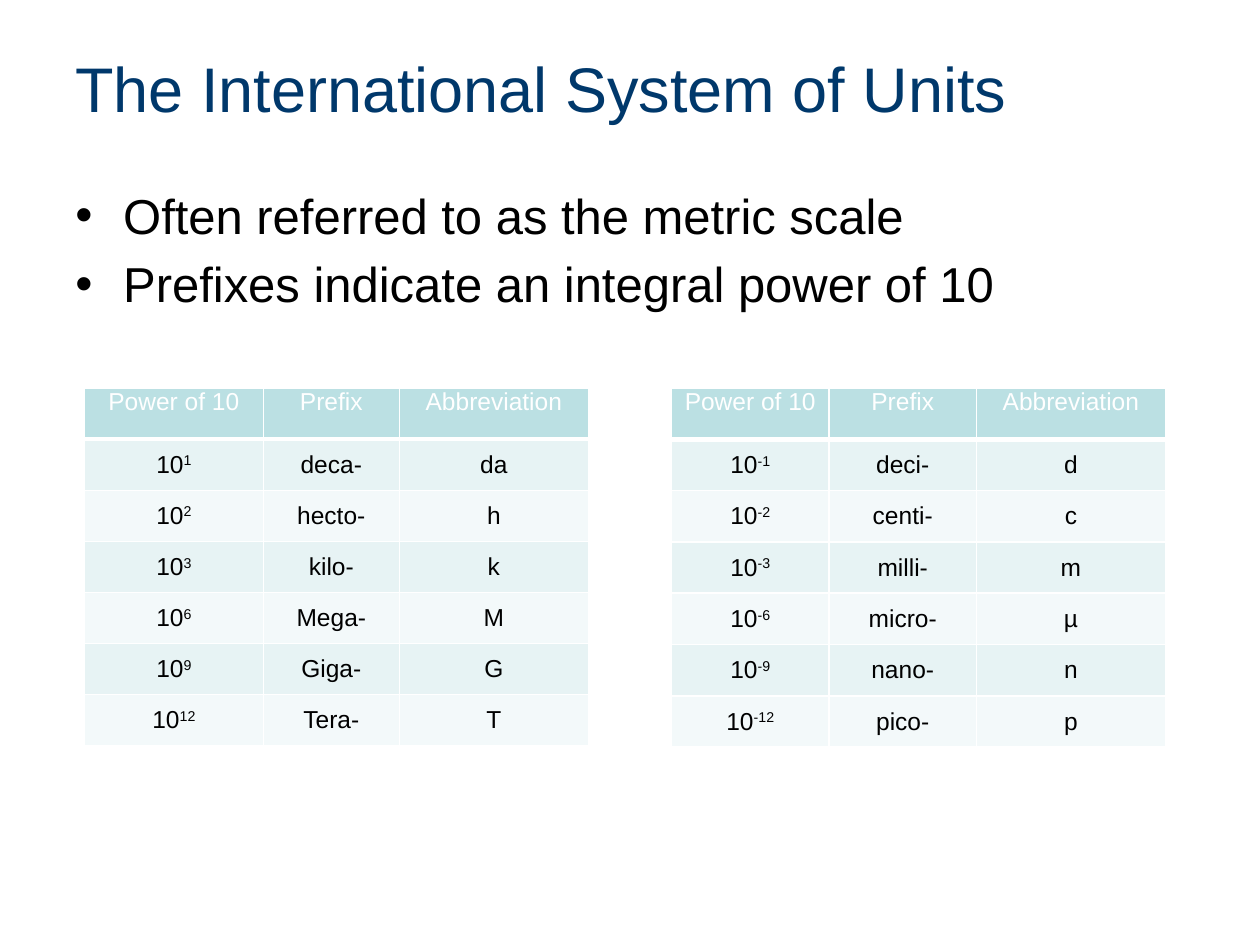
from pptx import Presentation
from pptx.dml.color import RGBColor
from pptx.enum import text
from pptx.oxml import parse_xml
from pptx.oxml.ns import nsdecls
from pptx.util import Inches, Pt

FONT = "Arial"
NAVY = RGBColor(0x00, 0x38, 0x6B)
BLACK = RGBColor(0x00, 0x00, 0x00)
WHITE = RGBColor(0xFF, 0xFF, 0xFF)
HEADER_FILL = RGBColor(0xBB, 0xE0, 0xE3)
BAND_FILLS = (RGBColor(0xE7, 0xF3, 0xF4), RGBColor(0xF3, 0xF9, 0xFA))

HEADINGS = ("Power of 10", "Prefix", "Abbreviation")
BULLETS = ("Often referred to as the metric scale",
           "Prefixes indicate an integral power of 10")
# Exponent, prefix, abbreviation
LARGE_UNITS = (("1", "deca-", "da"), ("2", "hecto-", "h"), ("3", "kilo-", "k"),
               ("6", "Mega-", "M"), ("9", "Giga-", "G"), ("12", "Tera-", "T"))
SMALL_UNITS = (("-1", "deci-", "d"), ("-2", "centi-", "c"), ("-3", "milli-", "m"),
               ("-6", "micro-", "µ"), ("-9", "nano-", "n"), ("-12", "pico-", "p"))


def style_runs(paragraph, size, color):
    for run in paragraph.runs:
        run.font.name = FONT
        run.font.size = Pt(size)
        run.font.bold = False
        run.font.color.rgb = color


def add_text_frame(slide, left, top, width, height):
    frame = slide.shapes.add_textbox(
        Inches(left), Inches(top), Inches(width), Inches(height)).text_frame
    frame.word_wrap = True
    return frame


def add_title(slide, wording):
    title = add_text_frame(slide, 0.5, 0.3, 9, 0.78)
    title.vertical_anchor = text.MSO_ANCHOR.MIDDLE
    title.text = wording
    style_runs(title.paragraphs[0], 36, NAVY)


def add_bullets(slide, points):
    body = add_text_frame(slide, 0.5, 1.42, 9, 5.28)
    body.text = "\n".join(points)
    for paragraph in body.paragraphs:
        style_runs(paragraph, 28, BLACK)
        properties = paragraph._p.get_or_add_pPr()
        properties.set("marL", str(Inches(0.38)))
        properties.set("indent", str(-Inches(0.38)))
        for xml in (f'<a:spcBef {nsdecls("a")}><a:spcPct val="20000"/></a:spcBef>',
                    f'<a:buFont {nsdecls("a")} typeface="{FONT}"/>',
                    f'<a:buChar {nsdecls("a")} char="•"/>'):
            properties.append(parse_xml(xml))


def set_borders(cell, bottom):
    properties = cell._tc.get_or_add_tcPr()
    for side, width in (("L", 1), ("R", 1), ("T", 1), ("B", bottom)):
        properties.append(parse_xml(
            f'<a:ln{side} {nsdecls("a")} w="{Pt(width)}"><a:solidFill>'
            f'<a:srgbClr val="{WHITE}"/></a:solidFill></a:ln{side}>'))


def fill_cell(cell, wording, fill, color, exponent="", bottom=1):
    cell.margin_left = cell.margin_right = Inches(0.07)
    cell.margin_top = cell.margin_bottom = 0
    set_borders(cell, bottom)
    cell.fill.solid()
    cell.fill.fore_color.rgb = fill
    paragraph = cell.text_frame.paragraphs[0]
    paragraph.text = wording
    paragraph.alignment = text.PP_ALIGN.CENTER
    if exponent:
        power = paragraph.add_run()
        power.text = exponent
        power._r.get_or_add_rPr().set("baseline", "30000")
    style_runs(paragraph, 14, color)


def add_prefix_table(slide, left, height, widths, units):
    table = slide.shapes.add_table(
        len(units) + 1, len(HEADINGS), Inches(left), Inches(3.08),
        Inches(sum(widths)), Inches(height)).table
    for column, width in zip(table.columns, widths):
        column.width = Inches(width)

    # Header row
    for col, heading in enumerate(HEADINGS):
        fill_cell(table.cell(0, col), heading, HEADER_FILL, WHITE, bottom=3)

    # Banded unit rows
    for row, (exponent, prefix, abbreviation) in enumerate(units, start=1):
        fill = BAND_FILLS[(row - 1) % 2]
        for col, wording in enumerate(("10", prefix, abbreviation)):
            cell = table.cell(row, col)
            cell.vertical_anchor = text.MSO_ANCHOR.MIDDLE
            fill_cell(cell, wording, fill, BLACK, exponent if col == 0 else "")


def main():
    deck = Presentation()
    deck.slide_width, deck.slide_height = Inches(10), Inches(7.5)
    slide = deck.slides.add_slide(deck.slide_layouts[6])

    add_title(slide, "The International System of Units")
    add_bullets(slide, BULLETS)
    add_prefix_table(slide, 0.67, 2.84, (1.42, 1.08, 1.5), LARGE_UNITS)
    add_prefix_table(slide, 5.33, 2.85, (1.25, 1.17, 1.5), SMALL_UNITS)

    deck.save("out.pptx")


if __name__ == "__main__":
    main()
